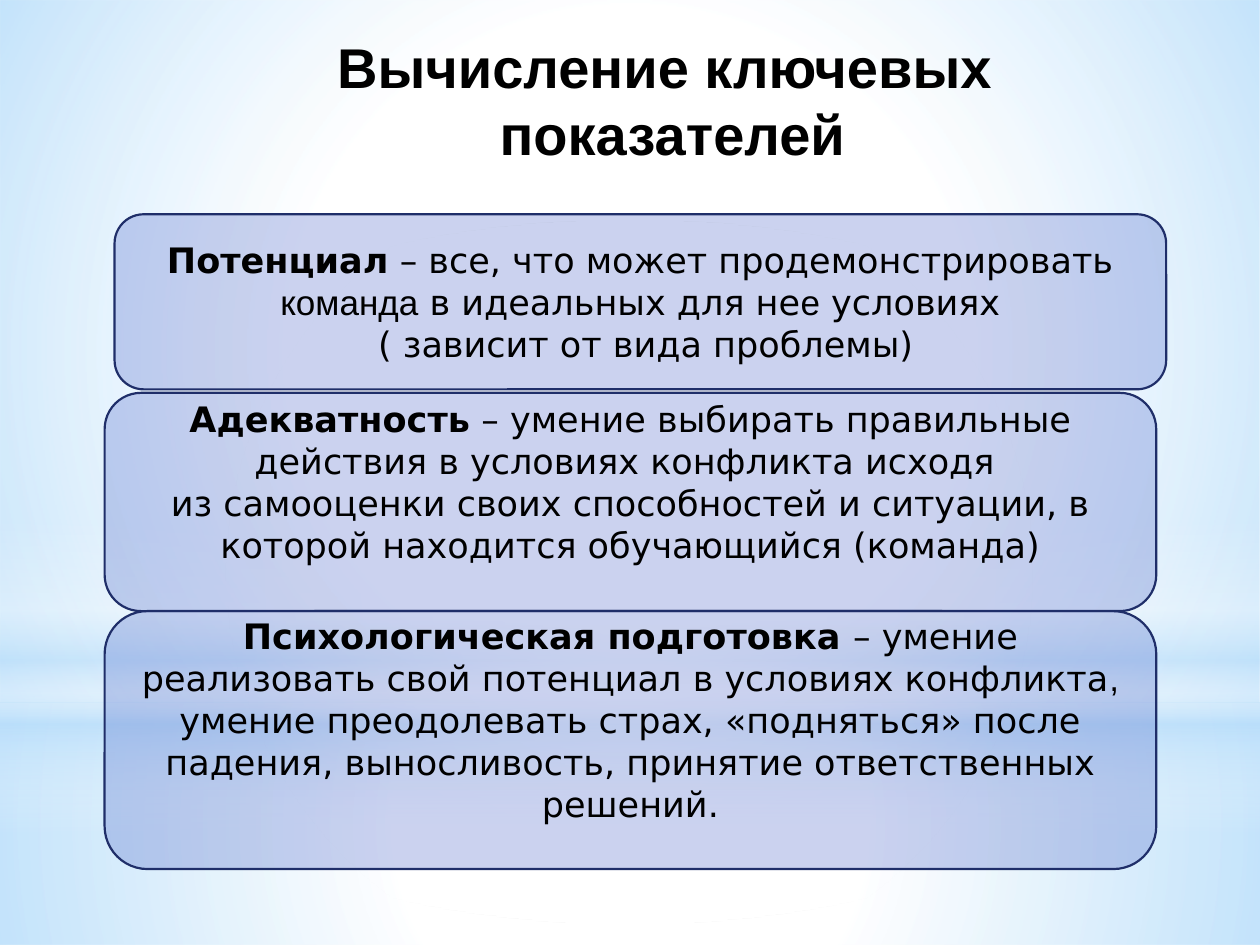
from lxml.etree import SubElement
from pptx import Presentation
from pptx.dml.color import RGBColor
from pptx.enum.shapes import MSO_SHAPE as Shape
from pptx.enum.text import MSO_ANCHOR as Anchor, PP_ALIGN as Align
from pptx.oxml.ns import qn
from pptx.util import Cm, Pt

COLORS = {"white": "FFFFFF", "sky": "B4DCFA", "panel": "4E67C8",
          "border": "1F2E69", "text": "000000"}
BODY, SANS = "DejaVu Sans", "Arial"
WIDTH, HEIGHT = 25.4, 19.05
HORIZON = 14.17
PANEL_WIDTH = 21.2
INSET = 0.13
SPARE_LINE = 0.84  # room kept free under the text, one line high

# Gradient stops: position, colour, opacity (percent)
FLOOR = [(0, "white", 91), (37, "white", 76), (100, "sky", 79)]
SKY = [(0, "white", 89), (48, "white", 62), (100, "sky", 79)]
BAND = [(0, "white", 0), (29, "white", 30), (45, "sky", 40),
        (55, "white", 26), (65, "sky", 60), (100, "white", 0)]
GLOW = [(0, "white", 100), (56, "white", 0)]

# Panels: left, top, height, spare room, paragraphs of (text, font, bold)
PANELS = [
    (2.31, 4.32, 3.53, 0, [
        [("Потенциал", BODY, True),
         (" – все, что может продемонстрировать ", BODY, False),
         ("команда", SANS, False), (" в идеальных для не", BODY, False),
         ("е", SANS, False), (" условиях", BODY, False)],
        [(" ( зависит от вида проблемы)", BODY, False)]]),
    (2.11, 7.92, 4.4, SPARE_LINE, [
        [("Адекватность", BODY, True),
         (" – умение выбирать правильные действия в условиях конфликта исходя ",
          BODY, False)],
        [("из самооценки своих способностей и ситуации, в которой находится "
          "обучающийся (команда)", BODY, False)]]),
    (2.11, 12.32, 5.2, SPARE_LINE, [
        [("Психологическая подготовка ", BODY, True),
         ("– умение реализовать свой потенциал в условиях конфликта", BODY, False),
         (", ", SANS, False),
         ("умение преодолевать страх, «подняться» после падения, выносливость, "
          "принятие ответственных решений.", BODY, False)]]),
]
TITLE = [[("Вычисление ключевых", SANS, True)], [(" показателей", SANS, True)]]


def color(name):
    return RGBColor.from_string(COLORS[name])


def add_alpha(fill, percent):
    SubElement(fill.find(".//" + qn("a:srgbClr")), qn("a:alpha"),
               val=str(percent * 1000))


def add_shape(page, kind, left, top, width, height):
    shape = page.shapes.add_shape(kind, Cm(left), Cm(top), Cm(width), Cm(height))
    shape.shadow.inherit = False
    return shape


def add_gradient(page, kind, top, height, stops, radial=True):
    """Full-width backdrop shape with a see-through gradient."""
    shape = add_shape(page, kind, 0, top, WIDTH, height)
    shape.line.fill.background()
    shape.fill.gradient()
    gradient = shape._element.spPr.find(qn("a:gradFill"))
    for child in list(gradient):
        gradient.remove(child)
    stop_list = SubElement(gradient, qn("a:gsLst"))
    for position, name, opacity in stops:
        stop = SubElement(stop_list, qn("a:gs"), pos=str(position * 1000))
        SubElement(stop, qn("a:srgbClr"), val=COLORS[name])
        add_alpha(stop, opacity)
    if radial:
        circle = SubElement(gradient, qn("a:path"), path="circle")
        SubElement(circle, qn("a:fillToRect"),
                   dict.fromkeys("ltrb", "50000"))
    else:
        SubElement(gradient, qn("a:lin"), ang="5400000", scaled="0")


def write_text(frame, paragraphs, size):
    frame.word_wrap = True
    for index, spans in enumerate(paragraphs):
        para = frame.add_paragraph() if index else frame.paragraphs[0]
        para.alignment = Align.CENTER
        for text, font, bold in spans:
            span = para.add_run()
            span.text = text
            span.font.name = font
            span.font.size = Pt(size)
            span.font.bold = bold
            span.font.color.rgb = color("text")


def add_panel(page, left, top, height, spare, paragraphs):
    panel = add_shape(page, Shape.ROUNDED_RECTANGLE, left, top, PANEL_WIDTH, height)
    panel.fill.solid()
    panel.fill.fore_color.rgb = color("panel")
    add_alpha(panel._element.spPr.find(qn("a:solidFill")), 29)
    panel.line.color.rgb = color("border")
    panel.line.width = Pt(1.25)
    frame = panel.text_frame
    frame.vertical_anchor = Anchor.MIDDLE
    frame.margin_top = Cm(INSET)
    frame.margin_bottom = Cm(INSET + spare)
    write_text(frame, paragraphs, 20)


def add_title(page):
    box = page.shapes.add_textbox(Cm(3.7), Cm(0.53), Cm(19.4), Cm(3))
    write_text(box.text_frame, TITLE, 32)


def main():
    deck = Presentation()
    deck.slide_width, deck.slide_height = Cm(WIDTH), Cm(HEIGHT)
    page = deck.slides.add_slide(deck.slide_layouts[6])
    page.background.fill.solid()
    page.background.fill.fore_color.rgb = color("white")

    # Backdrop
    add_gradient(page, Shape.RECTANGLE, HORIZON, HEIGHT - HORIZON, FLOOR)
    add_gradient(page, Shape.RECTANGLE, 0, HORIZON, SKY)
    add_gradient(page, Shape.RECTANGLE, 10.46, 6.35, BAND, radial=False)
    add_gradient(page, Shape.OVAL, 4.45, HORIZON, GLOW)

    # Panels and title
    for panel in PANELS:
        add_panel(page, *panel)
    add_title(page)
    deck.save("out.pptx")


if __name__ == "__main__":
    main()
